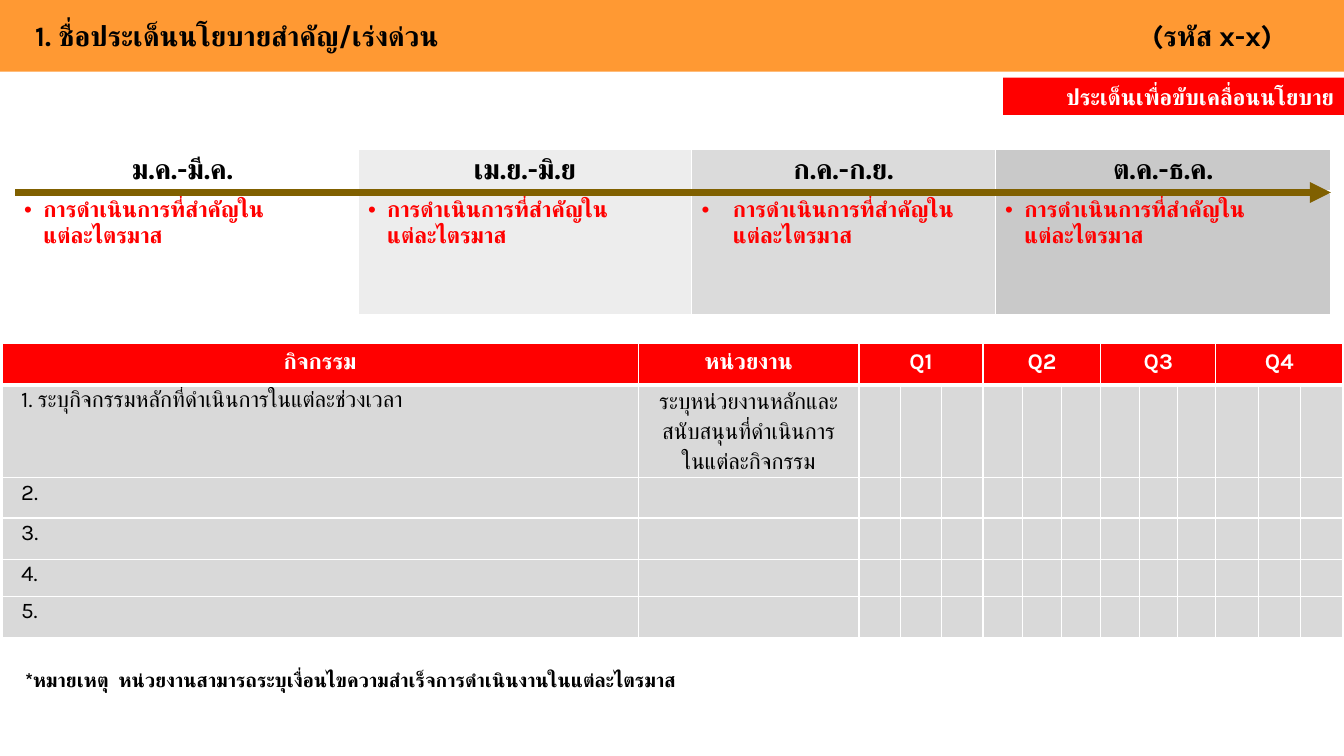
from pptx import Presentation
from pptx.dml.color import RGBColor
from pptx.enum.shapes import MSO_CONNECTOR, MSO_SHAPE
from pptx.enum.text import MSO_ANCHOR, PP_ALIGN
from pptx.oxml.ns import qn
from pptx.util import Inches, Pt
from lxml.etree import SubElement

RECTANGLE, STRAIGHT = MSO_SHAPE.RECTANGLE, MSO_CONNECTOR.STRAIGHT
MIDDLE = MSO_ANCHOR.MIDDLE
LEFT, CENTER, RIGHT = PP_ALIGN.LEFT, PP_ALIGN.CENTER, PP_ALIGN.RIGHT
FONT = "Karla"
COLORS = {"orange": "FF9933", "red": "FF0000", "black": "000000", "white": "FFFFFF",
          "gray": "D9D9D9", "olive": "806000"}
WIDTH, HEIGHT = 13.33, 7.5


def write(frame, text, size, color, bold=True, align=LEFT, spacing=1.0):
    frame.word_wrap = True
    for index, line in enumerate(text if isinstance(text, list) else [text]):
        para = frame.add_paragraph() if index else frame.paragraphs[0]
        para.text = line
        para.alignment = align
        para.line_spacing = spacing
        for span in para.runs:
            span.font.size = Pt(size)
            span.font.bold = bold
            span.font.name = FONT
            span.font.color.rgb = RGBColor.from_string(COLORS[color])
            SubElement(span.font._element, qn("a:cs"), typeface=FONT)


def paint(cell, fill, bottom=1):
    cell.fill.solid()
    cell.fill.fore_color.rgb = RGBColor.from_string(fill)
    properties = cell._tc.get_or_add_tcPr()
    for index, side in enumerate("LRTB"):
        weight = bottom if side == "B" else 1
        line = SubElement(properties, qn(f"a:ln{side}"), w=str(Pt(weight)))
        solid = SubElement(line, qn("a:solidFill"))
        SubElement(solid, qn("a:srgbClr"), val=COLORS["white"])
        properties.insert(index, line)


deck = Presentation()
deck.slide_width, deck.slide_height = Inches(WIDTH), Inches(HEIGHT)
page = deck.slides.add_slide(deck.slide_layouts[6])

banners = [
    (0, 0, WIDTH, 0.71, "orange", "1. ชื่อประเด็นนโยบายสำคัญ/เร่งด่วน\t(รหัส x-x)", 20, "black", LEFT, 0.35),
    (9.95, 0.77, 3.38, 0.37, "red", "ประเด็นเพื่อขับเคลื่อนนโยบาย", 16, "white", RIGHT, 0.1),
]
for left, top, width, height, fill, text, size, color, align, inset in banners:
    box = page.shapes.add_shape(RECTANGLE, Inches(left), Inches(top), Inches(width), Inches(height))
    box.shadow.inherit = False
    box.fill.solid()
    box.fill.fore_color.rgb = RGBColor.from_string(COLORS[fill])
    box.line.fill.background()
    box.text_frame.margin_left = Inches(inset)
    box.text_frame.vertical_anchor = MIDDLE
    write(box.text_frame, text, size, color, align=align)
    if "\t" in text:
        stops = SubElement(box.text_frame.paragraphs[0]._p.get_or_add_pPr(), qn("a:tabLst"))
        SubElement(stops, qn("a:tab"), pos=str(Inches(11.08)), algn="l")

quarters = [
    ("ม.ค.-มี.ค. ", 3.41, "FFFFFF", 0.19),
    ("เม.ย.-มิ.ย", 3.31, "EDEDED", 0.19),
    ("ก.ค.-ก.ย.", 3.01, "DBDBDB", 0.31),
    ("ต.ค.-ธ.ค.", 3.33, "C9C9C9", 0.19),
]
timeline = page.shapes.add_table(2, len(quarters), Inches(0.14), Inches(1.48),
                                 Inches(13.06), Inches(1.66)).table
timeline.rows[0].height, timeline.rows[1].height = Inches(0.34), Inches(1.22)
for column, (months, width, fill, indent) in enumerate(quarters):
    timeline.columns[column].width = Inches(width)
    heading, detail = timeline.cell(0, column), timeline.cell(1, column)
    paint(heading, fill, bottom=3)
    paint(detail, fill)
    write(heading.text_frame, months, 20, "black", align=CENTER)
    write(detail.text_frame, "การดำเนินการที่สำคัญใน\nแต่ละไตรมาส", 16, "red")
    settings = detail.text_frame.paragraphs[0]._p.get_or_add_pPr()
    settings.set("marL", str(Inches(indent)))
    settings.set("indent", str(-Inches(indent)))
    SubElement(settings, qn("a:buFont"), typeface="Arial")
    SubElement(settings, qn("a:buChar"), char="•")

arrow = page.shapes.add_connector(STRAIGHT, Inches(0.15), Inches(1.91), Inches(13.2), Inches(1.91))
arrow.line.color.rgb = RGBColor.from_string(COLORS["olive"])
arrow.line.width = Pt(5)
SubElement(arrow.line._get_or_add_ln(), qn("a:tailEnd"), type="triangle")
SubElement(arrow._element.spPr, qn("a:effectLst"))

month_widths = [0.41, 0.39, 0.38, 0.42]
column_widths = [6.31, 2.19] + [width for width in month_widths for month in range(3)]
row_heights = [0.41, 0.92, 0.4, 0.41, 0.37, 0.41]
activities = ["1. ระบุกิจกรรมหลักที่ดำเนินการในแต่ละช่วงเวลา", "2.", "3.", "4.", "5."]
plan = page.shapes.add_table(len(row_heights), len(column_widths), Inches(0.02), Inches(3.41),
                             Inches(sum(column_widths)), Inches(sum(row_heights))).table
for column, width in enumerate(column_widths):
    plan.columns[column].width = Inches(width)
for row, height in enumerate(row_heights):
    plan.rows[row].height = Inches(height)
    for column in range(len(column_widths)):
        cell = plan.cell(row, column)
        paint(cell, COLORS["gray" if row else "red"], bottom=1 if row else 3)
        if row:
            cell.margin_top = cell.margin_bottom = 0
            cell.margin_left = cell.margin_right = Inches(0.08)

headings = {0: "กิจกรรม", 1: "หน่วยงาน", 2: "Q1", 5: "Q2", 8: "Q3", 11: "Q4"}
for column, heading in headings.items():
    if column > 1:
        plan.cell(0, column).merge(plan.cell(0, column + 2))
    write(plan.cell(0, column).text_frame, heading, 16, "white", align=CENTER)
for row, activity in enumerate(activities, 1):
    plan.cell(row, 0).margin_left = Inches(0.19)
    write(plan.cell(row, 0).text_frame, activity, 16, "black", bold=False, spacing=1.07)
agencies = ["ระบุหน่วยงานหลักและสนับสนุนที่ดำเนินการ", "ในแต่ละกิจกรรม"]
write(plan.cell(1, 1).text_frame, agencies, 16, "black", bold=False, align=CENTER, spacing=1.15)

note = page.shapes.add_textbox(Inches(0.15), Inches(6.58), Inches(9.6), Inches(0.34))
write(note.text_frame, "*หมายเหตุ  หน่วยงานสามารถระบุเงื่อนไขความสำเร็จการดำเนินงานในแต่ละไตรมาส", 14, "black")

deck.save("out.pptx")
